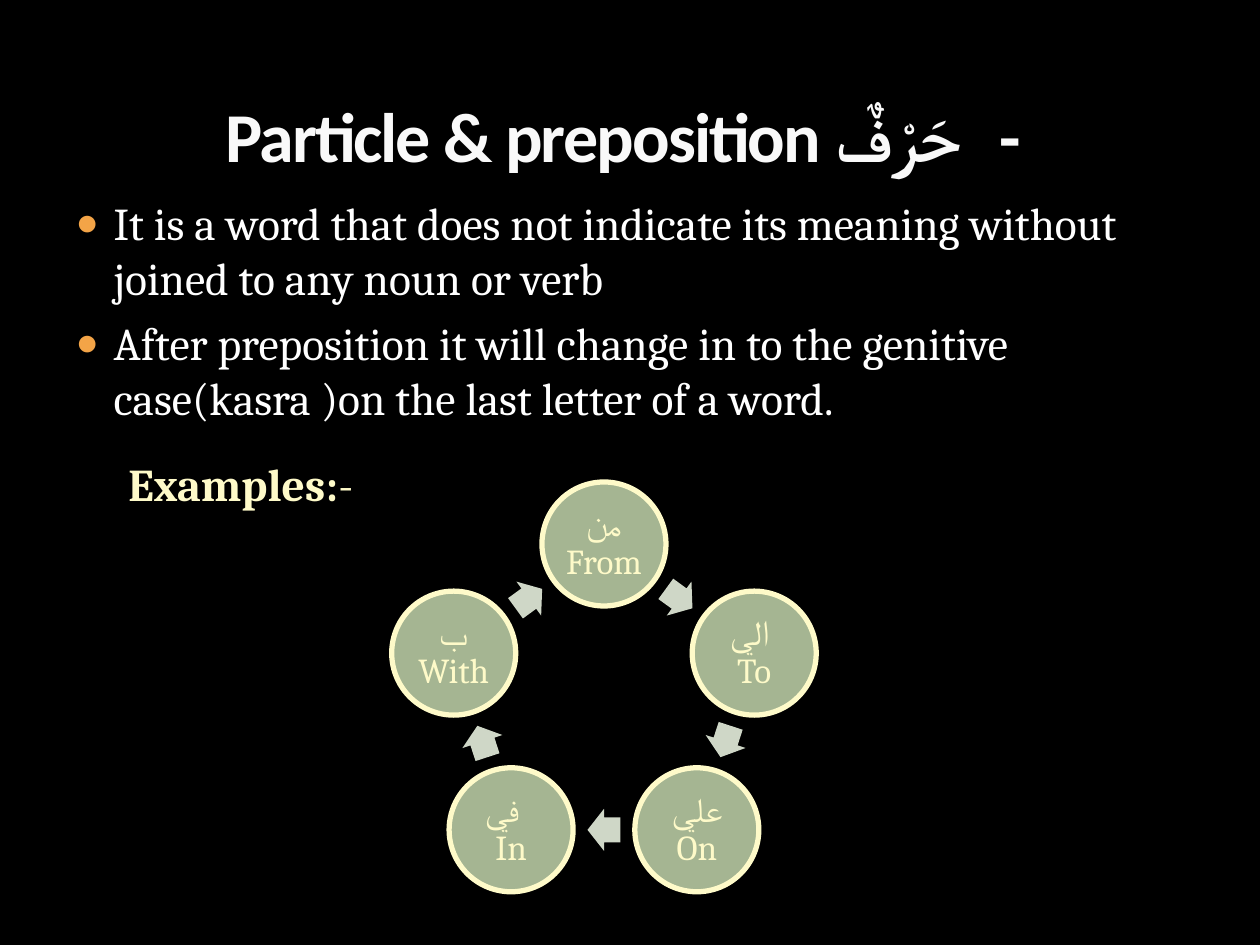
from dataclasses import dataclass
from math import cos, pi, sin

from lxml import etree
from pptx import Presentation
from pptx import util as u
from pptx.dml.color import RGBColor
from pptx.enum import shapes, text
from pptx.oxml.ns import qn

PX = u.Inches(1) / 126  # 126 px to the inch


@dataclass(frozen=True)
class Theme:
    background: str = "000000"
    title: str = "F9F9F9"
    body: str = "FFFFFF"
    bullet: str = "F3A447"
    accent: str = "FEFAC9"
    node: str = "A5B592"
    arrow: str = "CFD7C7"
    heading_font: str = "Calibri"
    body_font: str = "Cambria"
    title_size: int = 40
    body_size: int = 26
    node_size: int = 20


def emu(px):
    return u.Emu(round(px * PX))


def rgb(color):
    return RGBColor.from_string(color)


class SlideBuilder:
    """Holds the theme and the slide being drawn."""

    def __init__(self, slide, theme):
        self.slide = slide
        self.theme = theme
        slide.background.fill.solid()
        slide.background.fill.fore_color.rgb = rgb(theme.background)

    def place(self, shape, left, top, width, height):
        shape.left, shape.top = emu(left), emu(top)
        shape.width, shape.height = emu(width), emu(height)

    def style(self, paragraph, size, color, font=None, bold=False):
        for run in paragraph.runs:
            run.font.name = font or self.theme.body_font
            run.font.size = u.Pt(size)
            run.font.bold = bold
            run.font.color.rgb = rgb(color)

    def title(self, words, *box):
        shape = self.slide.shapes.title
        self.place(shape, *box)
        frame = shape.text_frame
        frame.text = words
        frame.auto_size = text.MSO_AUTO_SIZE.NONE
        frame.vertical_anchor = text.MSO_ANCHOR.TOP
        frame.margin_top = emu(92)
        paragraph = frame.paragraphs[0]
        paragraph.alignment = text.PP_ALIGN.CENTER
        self.style(paragraph, self.theme.title_size, self.theme.title,
                   self.theme.heading_font, bold=True)
        for run in paragraph.runs:
            run.font._element.set("spc", "-100")

    def bullets(self, items, *box):
        shape = self.slide.placeholders[1]
        self.place(shape, *box)
        frame = shape.text_frame
        frame.text = "\n".join(items)
        frame.auto_size = text.MSO_AUTO_SIZE.NONE
        for paragraph in frame.paragraphs:
            paragraph.space_before = u.Pt(6)
            self.style(paragraph, self.theme.body_size, self.theme.body)
            self.add_bullet(paragraph)

    def add_bullet(self, paragraph):
        properties = paragraph._p.get_or_add_pPr()
        indent = emu(38)
        properties.set("marL", str(indent))
        properties.set("indent", str(-indent))
        color = etree.SubElement(properties, qn("a:buClr"))
        etree.SubElement(color, qn("a:srgbClr"), val=self.theme.bullet)
        etree.SubElement(properties, qn("a:buSzPct"), val="85000")
        etree.SubElement(properties, qn("a:buChar"), char="●")

    def label(self, bold_part, plain_part, *box):
        shape = self.slide.shapes.add_textbox(*map(emu, box))
        shape.text_frame.word_wrap = True
        paragraph = shape.text_frame.paragraphs[0]
        paragraph.text = bold_part
        paragraph.add_run().text = plain_part
        self.style(paragraph, self.theme.body_size, self.theme.accent, bold=True)
        paragraph.runs[-1].font.bold = False

    def centred_shape(self, kind, x, y, width, height, fill):
        """Add a filled preset shape around the point x, y."""
        box = (x - width / 2, y - height / 2, width, height)
        shape = self.slide.shapes.add_shape(kind, *map(emu, box))
        shape.shadow.inherit = False
        shape.fill.solid()
        shape.fill.fore_color.rgb = rgb(fill)
        return shape

    def node(self, words, x, y, diameter):
        shape = self.centred_shape(shapes.MSO_SHAPE.OVAL, x, y, diameter,
                                   diameter, self.theme.node)
        shape.line.color.rgb = rgb(self.theme.accent)
        shape.line.width = u.Pt(3)
        frame = shape.text_frame
        frame.text = words
        frame.word_wrap = True
        frame.vertical_anchor = text.MSO_ANCHOR.MIDDLE
        frame.margin_left = frame.margin_right = emu(4)
        frame.margin_top = frame.margin_bottom = emu(4)
        paragraph = frame.paragraphs[0]
        paragraph.alignment = text.PP_ALIGN.CENTER
        paragraph.line_spacing = 0.9
        self.style(paragraph, self.theme.node_size, self.theme.accent)

    def arrow(self, x, y, degrees):
        shape = self.centred_shape(shapes.MSO_SHAPE.RIGHT_ARROW, x, y, 33, 42,
                                   self.theme.arrow)
        shape.line.fill.background()
        shape.adjustments[0] = 0.6
        shape.adjustments[1] = 0.5
        shape.rotation = degrees

    def cycle(self, words, x, y, radius, diameter):
        """Set nodes clockwise on a ring, with an arrow halfway between each pair."""
        step = 2 * pi / len(words)
        arrow_radius = radius * cos(step / 2)
        for index, word in enumerate(words):
            angle = index * step
            self.node(word, x + radius * sin(angle), y - radius * cos(angle), diameter)
            angle += step / 2
            self.arrow(x + arrow_radius * sin(angle), y - arrow_radius * cos(angle),
                       round(angle * 180 / pi))


def main():
    presentation = Presentation()
    presentation.slide_width, presentation.slide_height = emu(1260), emu(945)
    slide = presentation.slides.add_slide(presentation.slide_layouts[1])
    builder = SlideBuilder(slide, Theme())
    builder.title("Particle & preposition حَرْفٌ  - ", 63, 0, 1134, 168)
    builder.bullets([
        "It is a word that does not indicate its meaning without joined to any noun or verb",
        "After preposition it will change in to the genitive case(kasra )on the last letter of a word.",
    ], 63, 189, 1134, 252)
    builder.cycle(["من From", "الي  To", "علي On", "في   In", "ب With"],
                  x=604, y=702, radius=158, diameter=124)
    builder.label("Examples:", "-", 116, 450, 262, 68)
    presentation.save("out.pptx")


if __name__ == "__main__":
    main()
